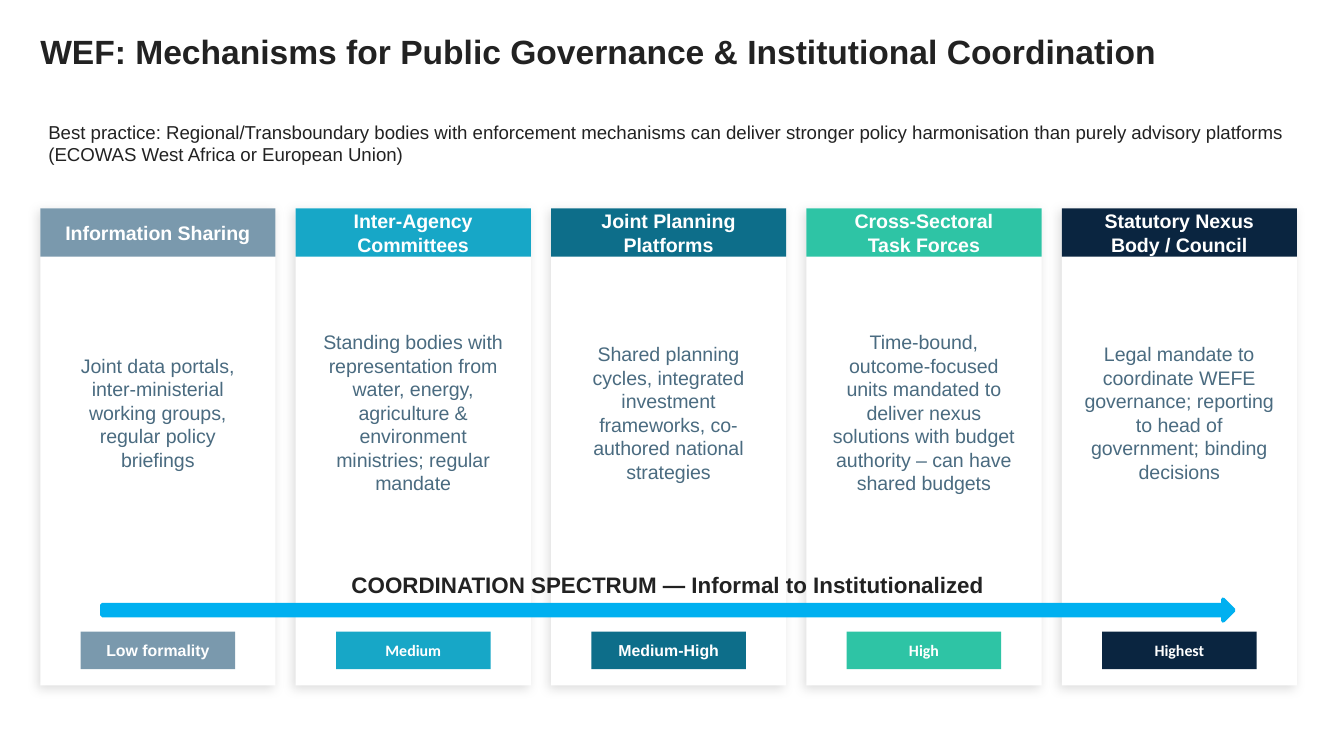
from lxml.etree import SubElement
from pptx import Presentation
from pptx.dml.color import RGBColor
from pptx.enum.shapes import MSO_SHAPE as Shape
from pptx.enum.text import MSO_ANCHOR as Anchor, PP_ALIGN as Align
from pptx.oxml.ns import qn
from pptx.util import Inches, Pt

SLIDE_WIDTH = 10
SLIDE_HEIGHT = SLIDE_WIDTH * 9 / 16
GRID_LEFT, COLUMN_WIDTH, GUTTER = 0.3, 1.75, 0.15
CARD_TOP, CARD_HEIGHT, HEADER_HEIGHT = 1.55, 3.55, 0.36
TEXT_PAD, BADGE_PAD = 0.06, 0.3
BADGE_TOP, BADGE_HEIGHT = 4.7, 0.28
INK, SLATE, WHITE, SKY = "222222", "4A6B80", "FFFFFF", "00B0F0"

MECHANISMS = [
    ("Information Sharing",
     "Joint data portals, inter-ministerial working groups, regular policy briefings",
     "Low formality", "Arial", "7A99AD"),
    ("Inter-Agency\nCommittees",
     "Standing bodies with representation from water, energy, agriculture & "
     "environment ministries; regular mandate",
     "Medium", "Calibri", "17A7C7"),
    ("Joint Planning\nPlatforms",
     "Shared planning cycles, integrated investment frameworks, "
     "co-authored national strategies",
     "Medium-High", "Arial", "0D6E8A"),
    ("Cross-Sectoral\nTask Forces",
     "Time-bound, outcome-focused units mandated to deliver nexus solutions "
     "with budget authority – can have shared budgets",
     "High", "Calibri", "2EC4A5"),
    ("Statutory Nexus\nBody / Council",
     "Legal mandate to coordinate WEFE governance; reporting to head of "
     "government; binding decisions",
     "Highest", "Calibri", "0A2540"),
]


def color(value):
    return RGBColor.from_string(value)


def column_left(index):
    return GRID_LEFT + index * (COLUMN_WIDTH + GUTTER)


def add_block(slide, left, top, width, height, fill, kind=Shape.RECTANGLE):
    shape = slide.shapes.add_shape(
        kind, Inches(left), Inches(top), Inches(width), Inches(height))
    shape.shadow.inherit = False
    shape.fill.solid()
    shape.fill.fore_color.rgb = color(fill)
    shape.line.fill.background()
    return shape


def add_soft_shadow(shape):
    effects = shape._element.spPr.find(qn("a:effectLst"))
    shadow = SubElement(effects, qn("a:outerShdw"), blurRad=str(Pt(6)),
                        dist=str(Pt(2)), dir=str(135 * 60000),
                        algn="bl", rotWithShape="0")
    tint = SubElement(shadow, qn("a:srgbClr"), val="000000")
    SubElement(tint, qn("a:alpha"), val="12000")


def add_text(slide, text, left, top, width, height, size=10.5, font="Arial",
             ink=WHITE, bold=False, align=Align.CENTER, margins=(0, 0)):
    box = slide.shapes.add_textbox(
        Inches(left), Inches(top), Inches(width), Inches(height))
    frame = box.text_frame
    frame.word_wrap = True
    frame.vertical_anchor = Anchor.MIDDLE
    frame.margin_left = frame.margin_right = Inches(margins[0])
    frame.margin_top = frame.margin_bottom = Inches(margins[1])
    frame.text = text
    for paragraph in frame.paragraphs:
        paragraph.alignment = align
        for run in paragraph.runs:
            run.font.size = Pt(size)
            run.font.name = font
            run.font.bold = bold
            run.font.color.rgb = color(ink)


def add_mechanism(slide, index, name, description, formality, badge_font, accent):
    left = column_left(index)
    text_left, text_width = left + TEXT_PAD, COLUMN_WIDTH - 2 * TEXT_PAD
    badge_left, badge_width = left + BADGE_PAD, COLUMN_WIDTH - 2 * BADGE_PAD

    add_soft_shadow(
        add_block(slide, left, CARD_TOP, COLUMN_WIDTH, CARD_HEIGHT, WHITE))
    add_block(slide, left, CARD_TOP, COLUMN_WIDTH, HEADER_HEIGHT, accent)
    add_text(slide, name, text_left, CARD_TOP + 0.02, text_width,
             HEADER_HEIGHT - 0.04, bold=True)
    add_text(slide, description, text_left, CARD_TOP + HEADER_HEIGHT + TEXT_PAD,
             text_width, 2.2, ink=SLATE, margins=(0.1, 0.05))
    add_block(slide, badge_left, BADGE_TOP, badge_width, BADGE_HEIGHT, accent)
    add_text(slide, formality, badge_left, BADGE_TOP + 0.01, badge_width,
             BADGE_HEIGHT - 0.02, size=8.5, font=badge_font, bold=True)


def add_spectrum(slide):
    arrow = add_block(slide, 0.76, 4.46, 8.42, 0.16, SKY, Shape.RIGHT_ARROW)
    arrow.line.color.rgb = color(SKY)
    arrow.line.width = Pt(2)
    add_text(slide, "COORDINATION SPECTRUM — Informal to Institutionalized",
             0.32, 4.2, 9.3, 0.3, size=12, ink=INK, bold=True)


def main():
    presentation = Presentation()
    presentation.slide_width = Inches(SLIDE_WIDTH)
    presentation.slide_height = Inches(SLIDE_HEIGHT)
    slide = presentation.slides.add_slide(presentation.slide_layouts[6])

    add_text(slide, "WEF: Mechanisms for Public Governance & Institutional Coordination",
             GRID_LEFT, 0.12, 9.2, 0.52, size=18, ink=INK, bold=True,
             align=Align.LEFT)
    for index, mechanism in enumerate(MECHANISMS):
        add_mechanism(slide, index, *mechanism)
    add_text(slide,
             "Best practice: Regional/Transboundary bodies with enforcement "
             "mechanisms can deliver stronger policy harmonisation than purely "
             "advisory platforms (ECOWAS West Africa or European Union)",
             GRID_LEFT + TEXT_PAD, 0.89, 9.3, 0.35, size=10, ink=INK,
             align=Align.LEFT)
    add_spectrum(slide)
    presentation.save("out.pptx")


if __name__ == "__main__":
    main()
